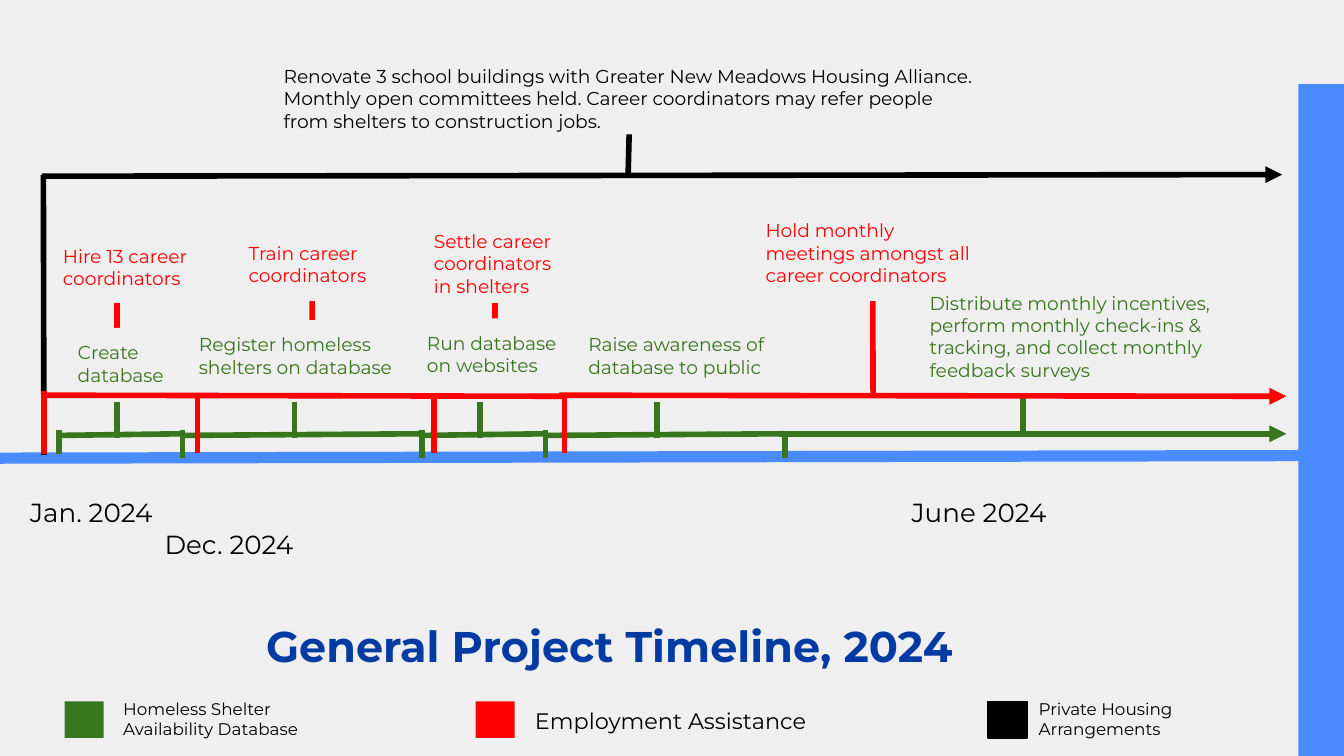
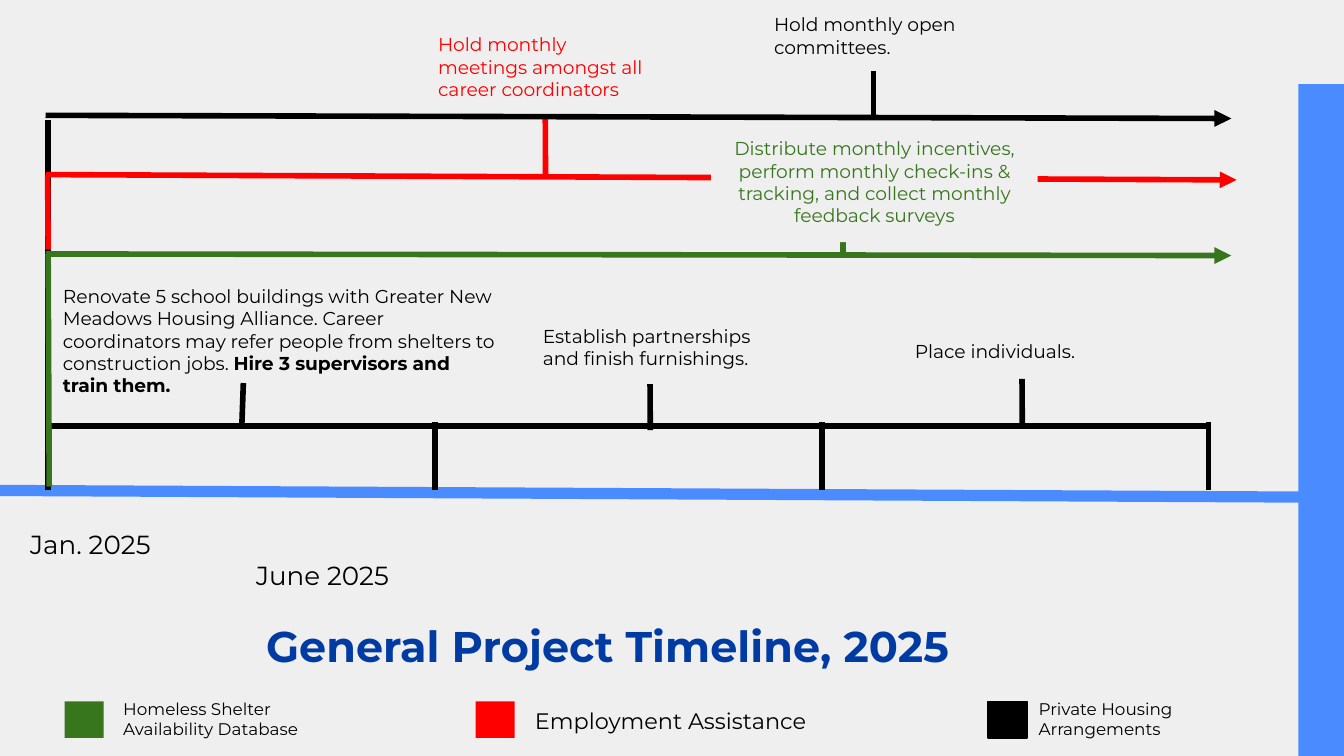
import pptx
import pptx.dml.color
import pptx.enum.shapes
import pptx.enum.text
import pptx.oxml
import pptx.oxml.ns
import pptx.util

Cm = pptx.util.Cm
RGBColor = pptx.dml.color.RGBColor
qn = pptx.oxml.ns.qn

# Shared look
FONT = "Montserrat"
PAPER = RGBColor(0xEF, 0xEF, 0xEF)
BAND_BLUE = RGBColor(0x4A, 0x8C, 0xFF)
TITLE_BLUE = RGBColor(0x00, 0x3B, 0xA3)
SHELTER = RGBColor(0x38, 0x76, 0x1D)
EMPLOYMENT = RGBColor(0xFF, 0x00, 0x00)
HOUSING = RGBColor(0x00, 0x00, 0x00)
INSET = Cm(0.25)
BOTTOM = 2

LEGEND = [  # swatch left, colour, name, name left, top, width, height, size
    (1.22, SHELTER, "Homeless Shelter Availability Database",
     (2.08, 12.95, 4.95, 1.27), 9),
    (8.99, EMPLOYMENT, "Employment Assistance", (9.86, 13.11, 5.77, 1.02), 12),
    (18.67, HOUSING, "Private Housing Arrangements",
     (19.38, 12.95, 4.95, 1.27), 9),
]
MEETINGS = "Hold monthly meetings amongst all career coordinators"
INCENTIVES = ("Distribute monthly incentives, perform monthly check-ins & "
              "tracking, and collect monthly feedback surveys")


def add_run(paragraph, text, size, color, bold=False):
    run = paragraph.add_run()
    run.text = text
    run.font.name = FONT
    run.font.size = pptx.util.Pt(size)
    run.font.color.rgb = color
    run.font.bold = bold


def set_frame(frame, auto_size):
    frame.word_wrap = True
    frame.auto_size = auto_size
    frame.vertical_anchor = pptx.enum.text.MSO_ANCHOR.TOP
    frame.margin_left = frame.margin_right = INSET
    frame.margin_top = frame.margin_bottom = INSET


def add_label(slide, box, text, color, size=10, bold_end="", masked=False,
              centred=False):
    """Text in a box; a masked one hides the lines behind it."""
    label = slide.shapes.add_textbox(*[Cm(v) for v in box])
    set_frame(label.text_frame, pptx.enum.text.MSO_AUTO_SIZE.SHAPE_TO_FIT_TEXT)
    if masked:
        label.fill.solid()
        label.fill.fore_color.rgb = PAPER
    paragraph = label.text_frame.paragraphs[0]
    if centred:
        paragraph.alignment = pptx.enum.text.PP_ALIGN.CENTER
    if text:
        add_run(paragraph, text, size, color)
    if bold_end:
        add_run(paragraph, bold_end, size, color, bold=True)
    return label


def add_line(slide, start, end, color, width=3, arrow=False, below=None):
    """Straight line, hung from the label `below` which it starts, if any."""
    line = slide.shapes.add_connector(
        pptx.enum.shapes.MSO_CONNECTOR.STRAIGHT,
        *[Cm(v) for v in (*start, *end)])
    if below is not None:
        line.begin_connect(below, BOTTOM)
    line.line.color.rgb = color
    line.line.width = pptx.util.Pt(width)
    properties = line._element.spPr
    if arrow:
        head = pptx.oxml.ns.qn("a:tailEnd")
        properties.find(qn("a:ln")).makeelement(head)
        tail = properties.find(qn("a:ln")).makeelement(head, {"type": "triangle"})
        properties.find(qn("a:ln")).append(tail)
    properties.append(properties.makeelement(qn("a:effectLst")))


def add_block(slide, box, color):
    block = slide.shapes.add_shape(
        pptx.enum.shapes.MSO_SHAPE.RECTANGLE, *[Cm(v) for v in box])
    block.shadow.inherit = False
    block.fill.solid()
    block.fill.fore_color.rgb = color
    block.line.fill.background()
    return block


def add_dates(slide, top, first_line, second_line, indent, tab=None):
    """Dates under the axis, the second line indented."""
    dates = add_label(slide, (0.32, top, 23.85, 1.7), first_line, HOUSING, 14)
    first = dates.text_frame.paragraphs[0]
    second = dates.text_frame.add_paragraph()
    add_run(second, second_line, 14, HOUSING)
    second._p.get_or_add_pPr().set("marL", str(Cm(indent)))
    if tab:
        properties = first._p.get_or_add_pPr()
        stops = properties.makeelement(qn("a:tabLst"))
        stops.append(stops.makeelement(
            qn("a:tab"), {"pos": str(Cm(tab)), "algn": "l"}))
        properties.append(stops)


def add_legend(slide):
    for left, color, name, box, size in LEGEND:
        swatch = add_block(slide, (left, 13.26, 0.74, 0.69), color)
        if color == HOUSING:
            swatch.line.color.rgb = HOUSING
            swatch.line.width = pptx.util.Pt(0.75)
        add_label(slide, box, name, HOUSING, size)


def start_slide(prs, layout, year):
    slide = prs.slides.add_slide(layout)
    title = slide.shapes.title
    title.left, title.top, title.width, title.height = [
        Cm(v) for v in (4.78, 11.46, 13.54, 1.8)]
    set_frame(title.text_frame, pptx.enum.text.MSO_AUTO_SIZE.NONE)
    paragraph = title.text_frame.paragraphs[0]
    paragraph.alignment = pptx.enum.text.PP_ALIGN.LEFT
    add_run(paragraph, f"General Project Timeline, {year}", 23, TITLE_BLUE, True)
    return slide


def build_2024(slide):
    add_line(slide, (0, 8.66), (25.4, 8.61), BAND_BLUE, 6)
    add_dates(slide, 9.14, "Jan. 2024\tJune 2024", "Dec. 2024", 2.54, 16.66)

    # Shelter database phases: bar, ticks at both ends, stem near the middle
    bounds = [1.12, 3.45, 7.98, 10.31, 14.83]
    for left, right in zip(bounds, bounds[1:]):
        stem = left + 0.467 * (right - left)
        add_line(slide, (stem, 7.59), (stem, 8.28), SHELTER)
        add_line(slide, (left, 8.23), (right, 8.2), SHELTER)
        add_line(slide, (right, 8.23), (right, 8.66), SHELTER)
        add_line(slide, (left, 8.13), (left, 8.59), SHELTER)

    # Employment steps
    add_line(slide, (0.82, 3.31), (0.83, 8.6), HOUSING)
    for left, top, height, stem, drop, joined, text in [
            (0.94, 4.37, 1.37, 2.21, 3.73, False, "Hire 13 career coordinators"),
            (4.45, 4.32, 1.37, 5.89, 8.2, True, "Train career coordinators"),
            (7.95, 4.09, 1.8, 9.35, 10.67, False,
             "Settle career coordinators in shelters")]:
        label = add_label(slide, (left, top, 2.9, height), text, EMPLOYMENT)
        add_line(slide, (stem, 5.72), (stem, 7.4), EMPLOYMENT,
                 below=label if joined else None)
        add_line(slide, (drop, 7.46), (drop, 8.56), EMPLOYMENT)

    # Shelter database labels
    for left, top, width, text in [
            (1.22, 6.2, 2.34, "Create database"),
            (3.51, 6.05, 4.19, "Register homeless shelters on database"),
            (7.82, 6.02, 3.48, "Run database on websites"),
            (10.87, 6.05, 4.19, "Raise awareness of database to public")]:
        add_label(slide, (left, top, width, 1.37), text, SHELTER, masked=True)
    add_line(slide, (0.81, 7.47), (10.62, 7.49), EMPLOYMENT)

    # Ongoing work to the end of the year
    add_line(slide, (14.73, 8.2), (24.31, 8.2), SHELTER, arrow=True)
    add_line(slide, (19.33, 7.52), (19.33, 8.2), SHELTER)
    add_label(slide, (17.32, 5.26, 6.17, 2.24), INCENTIVES, SHELTER)
    add_line(slide, (10.57, 7.47), (24.31, 7.49), EMPLOYMENT, arrow=True)
    meetings = add_label(slide, (14.22, 3.89, 4.55, 1.8), MEETINGS, EMPLOYMENT)
    add_line(slide, (16.5, 5.69), (16.5, 7.49), EMPLOYMENT, below=meetings)
    add_line(slide, (0.79, 3.33), (24.23, 3.3), HOUSING, arrow=True)
    add_line(slide, (11.89, 2.54), (11.87, 3.33), HOUSING)
    add_label(slide, (5.11, 0.97, 13.54, 1.8),
              "Renovate 3 school buildings with Greater New Meadows Housing "
              "Alliance. Monthly open committees held. Career coordinators may "
              "refer people from shelters to construction jobs.", HOUSING)
    add_line(slide, (0.83, 7.4), (0.83, 8.58), EMPLOYMENT)


def build_2025(slide):
    add_line(slide, (0, 9.27), (25.4, 9.4), BAND_BLUE, 6)
    add_dates(slide, 9.73, "Jan. 2025", "June 2025", 4.27)
    add_line(slide, (0.91, 2.26), (0.91, 9.25), HOUSING)

    # Ongoing shelter and employment work
    add_line(slide, (0.86, 4.8), (23.27, 4.83), SHELTER, arrow=True)
    add_line(slide, (15.93, 4.14), (15.93, 4.83), SHELTER)
    add_line(slide, (0.86, 3.3), (23.37, 3.4), EMPLOYMENT, arrow=True)
    meetings = add_label(slide, (8.03, 0.38, 4.55, 1.8), MEETINGS, EMPLOYMENT)
    add_line(slide, (10.3, 2.18), (10.31, 3.35), EMPLOYMENT, below=meetings)
    add_label(slide, (13.44, 2.34, 6.17, 2.24), INCENTIVES, SHELTER,
              masked=True, centred=True)

    # Housing phases of equal length
    add_line(slide, (0.86, 8.05), (22.84, 8.05), HOUSING)
    for phase in range(4):
        tick = 0.91 + 7.31 * phase
        add_line(slide, (tick, 7.98), (tick, 9.27), HOUSING)
    add_label(slide, (0.94, 5.13, 8.69, 3.5),
              "Renovate 5 school buildings with Greater New Meadows Housing "
              "Alliance. Career coordinators may refer people from shelters to "
              "construction jobs. ", HOUSING,
              bold_end="Hire 3 supervisors and train them.")
    add_line(slide, (4.6, 7.24), (4.57, 8.05), HOUSING)
    furnishing = add_label(slide, (10.01, 5.89, 4.55, 1.37),
                           "Establish partnerships and finish furnishings.",
                           HOUSING)
    add_line(slide, (12.28, 7.26), (12.29, 8.13), HOUSING, below=furnishing)
    placing = add_label(slide, (17.04, 6.22, 4.55, 0.94), "Place individuals.",
                        HOUSING)
    add_line(slide, (19.32, 7.16), (19.32, 8), HOUSING, below=placing)

    # Housing committees
    add_line(slide, (0.86, 2.18), (23.27, 2.24), HOUSING, arrow=True)
    add_line(slide, (16.51, 1.35), (16.51, 2.24), HOUSING)
    add_label(slide, (14.38, 0, 4.55, 1.37), "Hold monthly open committees.",
              HOUSING)

    # Starts of the ongoing work
    add_line(slide, (0.91, 4.8), (0.93, 9.2), SHELTER)
    add_line(slide, (0.9, 3.3), (0.91, 4.72), EMPLOYMENT)


def main():
    prs = pptx.Presentation()
    prs.slide_width, prs.slide_height = Cm(25.4), Cm(14.29)
    background = prs.slide_master.background.fill
    background.solid()
    background.fore_color.rgb = PAPER
    layout = prs.slide_layouts[5]

    for year, build in ((2024, build_2024), (2025, build_2025)):
        slide = start_slide(prs, layout, year)
        add_block(slide, (24.54, 1.59, 0.86, 12.7), BAND_BLUE)
        build(slide)
        add_legend(slide)
    prs.save("out.pptx")


if __name__ == "__main__":
    main()
